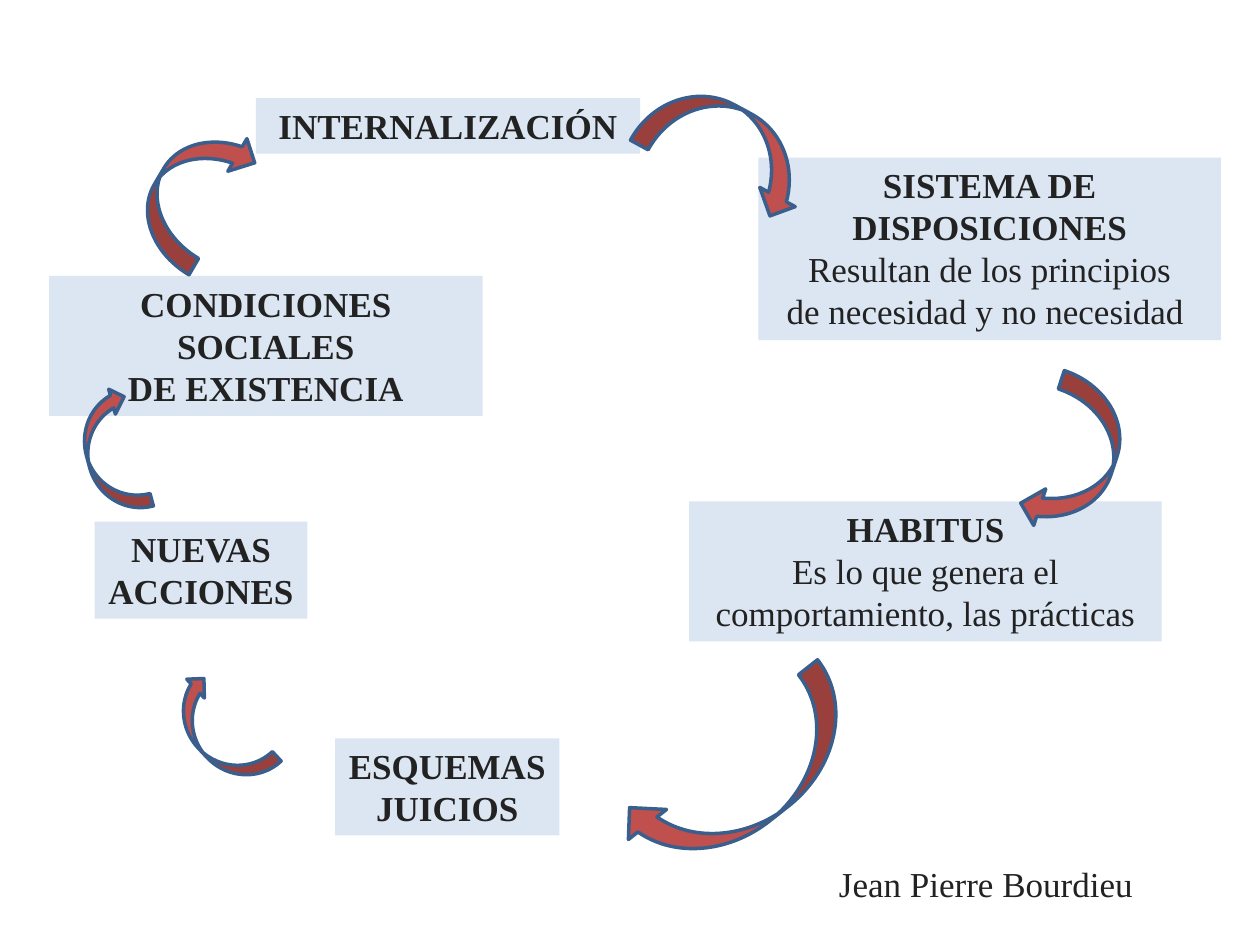
from dataclasses import dataclass

from pptx import Presentation
from pptx import util as u
from pptx.dml.color import RGBColor
from pptx.enum import shapes, text

INK = "222222"
PANEL = "DCE6F2"
ARROW = "C0504D"
OUTLINE = "3A5F8C"
FRAME_FORMAT = {
    "auto_size": text.MSO_AUTO_SIZE.SHAPE_TO_FIT_TEXT,
    "vertical_anchor": text.MSO_ANCHOR.TOP,
}
FONT_FORMAT = {"name": "Times New Roman", "size": u.Pt(20)}


@dataclass
class Area:
    left: float
    top: float
    width: float
    height: float

    def lengths(self) -> list:
        return [u.Inches(v) for v in (self.left, self.top, self.width, self.height)]


@dataclass
class Stage:
    area: Area
    heading: list[str]
    detail: list[str]
    wrap: bool = True


@dataclass
class Turn:
    area: Area
    angle: float


STAGES = [
    Stage(Area(2.03, 0.78, 3.05, 0.44), ["INTERNALIZACIÓN"], []),
    Stage(Area(6.02, 1.25, 3.67, 1.45), ["SISTEMA DE DISPOSICIONES"],
          ["Resultan de los principios", "de necesidad y no necesidad "]),
    Stage(Area(5.47, 3.98, 3.75, 1.11), ["HABITUS"],
          ["Es lo que genera el comportamiento, las prácticas"]),
    Stage(Area(0.39, 2.19, 3.44, 1.11), ["CONDICIONES SOCIALES", "DE EXISTENCIA"], []),
    Stage(Area(2.66, 5.86, 1.78, 0.77), ["ESQUEMAS", "JUICIOS"], [], wrap=False),
    Stage(Area(0.75, 4.14, 1.69, 0.77), ["NUEVAS", "ACCIONES"], [], wrap=False),
]

TURNS = [
    Turn(Area(5.07, 0.85, 1.42, 0.64), 28.5),
    Turn(Area(7.91, 3.33, 1.26, 0.61), 108.2),
    Turn(Area(4.86, 5.8, 2.09, 0.77), 141.8),
    Turn(Area(1.24, 5.61, 1, 0.41), 226.9),
    Turn(Area(0.39, 3.38, 1, 0.41), 255),
    Turn(Area(0.95, 1.22, 1.18, 0.6), 300.4),
]


def paint(target, color: str) -> None:
    target.solid()
    target.fore_color.rgb = RGBColor.from_string(color)


def apply(target, values: dict) -> None:
    for name, value in values.items():
        setattr(target, name, value)


def write(box, lines: list[tuple[str, bool]], align, wrap: bool) -> None:
    frame = box.text_frame
    apply(frame, {**FRAME_FORMAT, "word_wrap": wrap})
    for index, (words, bold) in enumerate(lines):
        para = frame.add_paragraph() if index else frame.paragraphs[0]
        para.alignment = align
        span = para.add_run()
        span.text = words
        apply(span.font, {**FONT_FORMAT, "bold": bold})
        paint(span.font.fill, INK)


def draw_stage(page, stage: Stage) -> None:
    box = page.shapes.add_shape(shapes.MSO_SHAPE.RECTANGLE, *stage.area.lengths())
    box.shadow.inherit = False
    paint(box.fill, PANEL)
    box.line.fill.background()
    lines = [(words, True) for words in stage.heading]
    lines += [(words, False) for words in stage.detail]
    write(box, lines, text.PP_ALIGN.CENTER, stage.wrap)


def draw_turn(page, turn: Turn) -> None:
    arrow = page.shapes.add_shape(shapes.MSO_SHAPE.CURVED_DOWN_ARROW, *turn.area.lengths())
    arrow.shadow.inherit = False
    arrow.rotation = turn.angle
    paint(arrow.fill, ARROW)
    paint(arrow.line.fill, OUTLINE)
    arrow.line.width = u.Pt(2)


def main() -> None:
    deck = Presentation()
    apply(deck, {"slide_width": u.Inches(10), "slide_height": u.Inches(7.5)})
    page = deck.slides.add_slide(deck.slide_layouts[6])
    for stage in STAGES:
        draw_stage(page, stage)
    for turn in TURNS:
        draw_turn(page, turn)
    author = page.shapes.add_textbox(*Area(6.56, 6.8, 2.55, 0.44).lengths())
    write(author, [("Jean Pierre Bourdieu", False)], text.PP_ALIGN.LEFT, False)
    deck.save("out.pptx")


if __name__ == "__main__":
    main()
